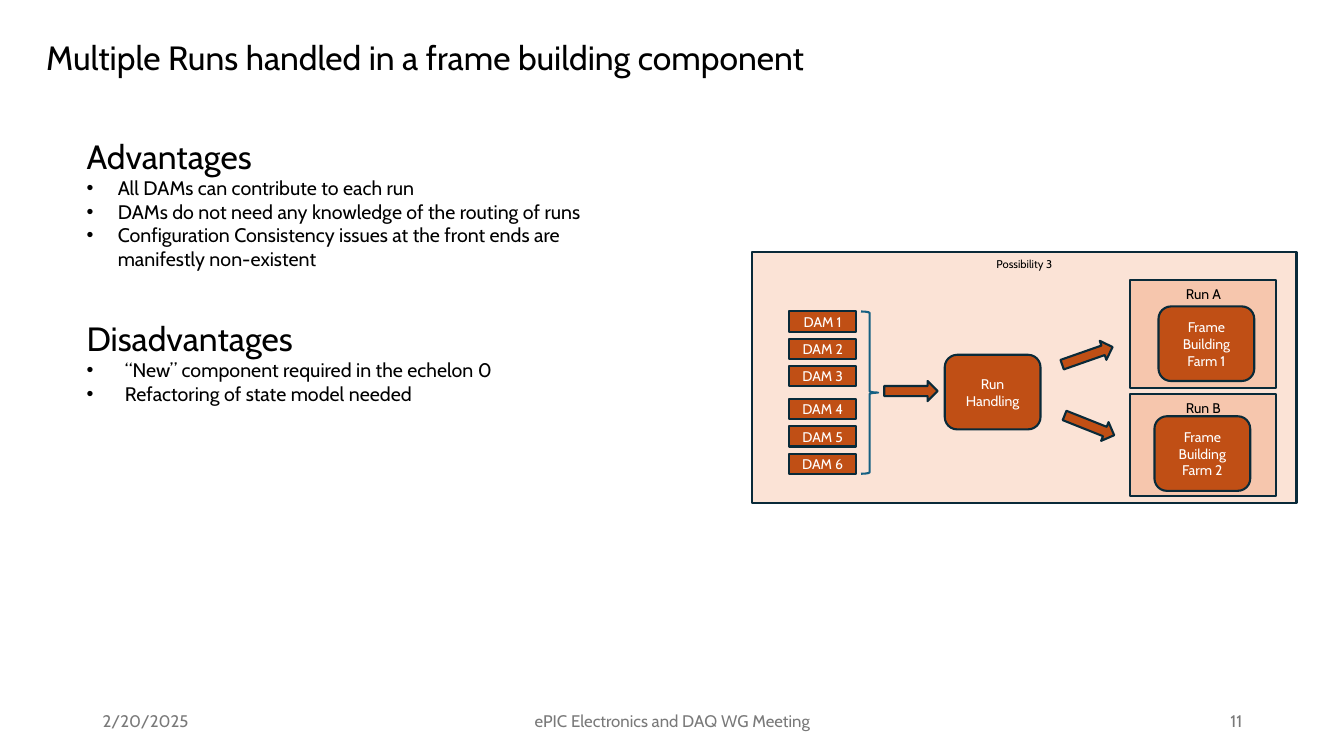
"""Build a slide on handling multiple runs in a frame building component."""
import dataclasses

import lxml.etree
import pptx
import pptx.dml.color
import pptx.enum.shapes
import pptx.enum.text
import pptx.oxml.ns
import pptx.util

Inches = pptx.util.Inches
Pt = pptx.util.Pt
Shape = pptx.enum.shapes.MSO_SHAPE
Align = pptx.enum.text.PP_ALIGN
Anchor = pptx.enum.text.MSO_ANCHOR


@dataclasses.dataclass(frozen=True)
class Theme:
    """Hold the font, colours and type sizes."""
    font: str = "Cabin"
    black: str = "000000"
    white: str = "FFFFFF"
    grey: str = "797979"
    cream: str = "FBE3D6"
    peach: str = "F6C6AD"
    rust: str = "C04F15"
    edge: str = "092A39"
    blue: str = "156082"
    head: int = 24
    body: int = 14
    foot: int = 12
    label: int = 10
    small: int = 8
    line: float = 1.5


THEME = Theme()


def color(code):
    """Turn a hex code into a colour."""
    return pptx.dml.color.RGBColor.from_string(code)


def write(para, text, size, tint, align=Align.LEFT):
    """Add one styled run to a paragraph."""
    para.alignment = align
    run = para.add_run()
    run.text = text
    run.font.name = THEME.font
    run.font.size = Pt(size)
    run.font.color.rgb = color(tint)


def bullet(para, indent):
    """Give a paragraph a hanging bullet."""
    props = para._p.get_or_add_pPr()
    props.set("marL", str(Inches(indent)))
    props.set("indent", str(-Inches(indent)))
    for tag, key, value in (("buFont", "typeface", "Arial"), ("buChar", "char", "•")):
        node = lxml.etree.SubElement(props, pptx.oxml.ns.qn("a:" + tag))
        node.set(key, value)


def frame(slide, box, anchor=Anchor.TOP):
    """Add a wrapping text box and return its text frame."""
    text = slide.shapes.add_textbox(*map(Inches, box)).text_frame
    text.word_wrap = True
    text.vertical_anchor = anchor
    return text


def shape(slide, kind, box, fill=None, edge=THEME.edge, turn=0):
    """Add an outlined preset shape."""
    item = slide.shapes.add_shape(kind, *map(Inches, box))
    item.shadow.inherit = False
    item.rotation = turn
    if fill:
        item.fill.solid()
        item.fill.fore_color.rgb = color(fill)
    else:
        item.fill.background()
    item.line.color.rgb = color(edge)
    item.line.width = Pt(THEME.line)
    return item


def panel(slide, box, fill, text, size):
    """Add a pale area with its title at the top."""
    area = shape(slide, Shape.RECTANGLE, box, fill).text_frame
    area.vertical_anchor = Anchor.TOP
    write(area.paragraphs[0], text, size, THEME.black, Align.CENTER)


def block(slide, kind, box, text):
    """Add a rust block with a centred label."""
    label = shape(slide, kind, box, THEME.rust).text_frame
    label.word_wrap = True
    label.vertical_anchor = Anchor.MIDDLE
    write(label.paragraphs[0], text, THEME.label, THEME.white, Align.CENTER)


def points(text, title, items, indent, gap=0):
    """Write a heading and its bullets into a text frame."""
    head = text.add_paragraph() if gap else text.paragraphs[0]
    if gap:
        head.space_before = Pt(gap)
    write(head, title, THEME.head, THEME.black)
    for item in items:
        para = text.add_paragraph()
        bullet(para, indent)
        write(para, item, THEME.body, THEME.black)


def diagram(slide):
    """Draw the flow from the DAMs to the two farms."""
    panel(slide, (7.46, 2.5, 5.4, 2.49), THEME.cream, "Possibility 3", THEME.small)
    panel(slide, (11.21, 3.91, 1.45, 1.01), THEME.peach, "Run B", THEME.label)
    panel(slide, (11.21, 2.78, 1.45, 1.07), THEME.peach, "Run A", THEME.label)
    for i in range(6):
        top = 3.09 + 0.27 * i + 0.06 * (i // 3)
        block(slide, Shape.RECTANGLE, (7.83, top, 0.66, 0.2), f"DAM {i + 1}")
    shape(slide, Shape.RIGHT_BRACE, (8.54, 3.09, 0.17, 1.61), edge=THEME.blue)
    for left, top, text in (
        (9.37, 3.52, "Run Handling"),
        (11.49, 3.04, "Frame Building Farm 1"),
        (11.45, 4.13, "Frame Building Farm 2"),
    ):
        block(slide, Shape.ROUNDED_RECTANGLE, (left, top, 0.95, 0.74), text)
    for left, top, turn in ((8.77, 3.78, 0), (10.52, 3.43, 340.7), (10.54, 4.12, 21.7)):
        shape(slide, Shape.RIGHT_ARROW, (left, top, 0.53, 0.2), THEME.rust, turn=turn)


def footer(slide):
    """Write the date, meeting name and page number."""
    for left, width, text, align in (
        (0.92, 3, "2/20/2025", Align.LEFT),
        (4.42, 4.5, "ePIC Electronics and DAQ WG Meeting", Align.CENTER),
        (9.42, 3, "11", Align.RIGHT),
    ):
        note = frame(slide, (left, 6.95, width, 0.4), Anchor.MIDDLE)
        write(note.paragraphs[0], text, THEME.foot, THEME.grey, align)


def main():
    """Build and save the slide."""
    deck = pptx.Presentation()
    deck.slide_width = Inches(13.33)
    deck.slide_height = Inches(7.5)
    slide = deck.slides.add_slide(deck.slide_layouts[6])
    footer(slide)
    diagram(slide)
    title = frame(slide, (0.36, 0.32, 8.96, 0.74))
    write(title.paragraphs[0], "Multiple Runs handled in a frame building component",
          THEME.head, THEME.black)
    text = frame(slide, (0.76, 1.3, 5.71, 3.5))
    points(text, "Advantages", (
        "All DAMs can contribute to each run",
        "DAMs do not need any knowledge of the routing of runs",
        "Configuration Consistency issues at the front ends are manifestly non-existent",
    ), 0.31)
    points(text, "Disadvantages", (
        "“New” component required in the echelon 0",
        "Refactoring of state model needed",
    ), 0.38, gap=34)
    deck.save("out.pptx")


if __name__ == "__main__":
    main()
